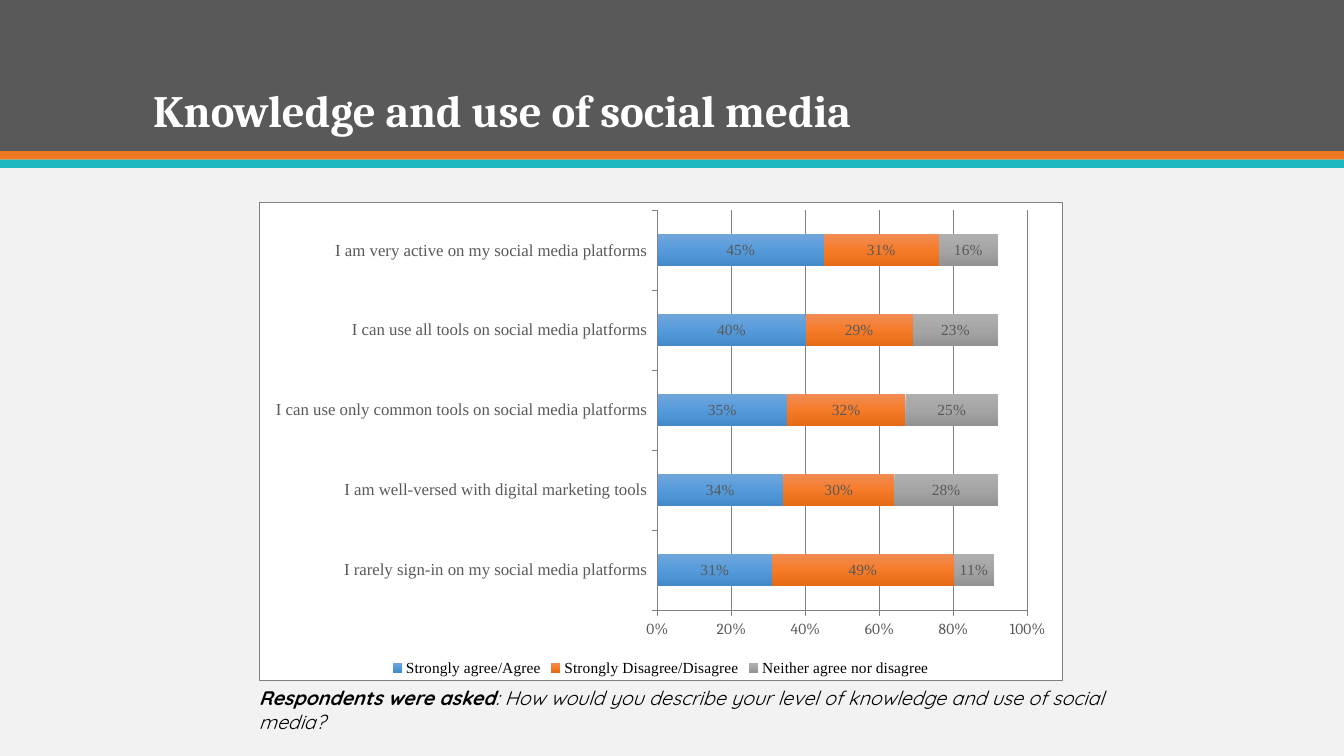
from dataclasses import dataclass

from lxml import etree
from pptx import Presentation
from pptx import util as u
from pptx.chart.data import CategoryChartData
from pptx.dml.color import RGBColor
from pptx.enum import chart as ch
from pptx.enum import shapes, text
from pptx.oxml import parse_xml
from pptx.oxml.ns import nsdecls, qn


@dataclass(frozen=True)
class Theme:
    background: str = "F2F2F2"
    header: str = "595959"
    orange: str = "EF7920"
    teal: str = "1EB8C1"
    white: str = "FFFFFF"
    black: str = "000000"
    chart_text: str = "595959"
    rule: str = "808080"
    heading_font: str = "Cambria"
    note_font: str = "Quicksand"
    chart_font: str = "Times New Roman"
    title_size: float = 32
    note_size: float = 14
    category_size: float = 12
    label_size: float = 11
    chart_size: float = 10
    rule_width: float = 0.25


@dataclass(frozen=True)
class Band:
    top: float
    height: float
    color: str


@dataclass(frozen=True)
class Answer:
    name: str
    values: tuple[float, ...]
    gradient: tuple[str, str, str]


THEME = Theme()
SLIDE_WIDTH, SLIDE_HEIGHT = 960, 540

BANDS = (
    Band(0, 108, THEME.header),
    Band(108, 6, THEME.orange),
    Band(114, 6, THEME.teal),
)
STATEMENTS = (
    "I rarely sign-in on my social media platforms",
    "I am well-versed with digital marketing tools",
    "I can use only common tools on social media platforms",
    "I can use all tools on social media platforms",
    "I am very active on my social media platforms",
)
ANSWERS = (
    Answer("Strongly agree/Agree", (0.31, 0.34, 0.35, 0.4, 0.45),
           ("71A6DB", "559BDB", "438AC9")),
    Answer("Strongly Disagree/Disagree", (0.49, 0.3, 0.32, 0.29, 0.31),
           ("F18C55", "F67B28", "E56B17")),
    Answer("Neither agree nor disagree", (0.11, 0.28, 0.25, 0.23, 0.16),
           ("AFAFAF", "A5A5A5", "929292")),
)


def style_font(font, *, size: float, name: str, color: str,
               bold: bool = False, italic: bool = False) -> None:
    font.size = u.Pt(size)
    font.name = name
    font.bold = bold
    font.italic = italic
    font.color.rgb = RGBColor.from_string(color)


def add_text(paragraph, content: str, **font_format) -> None:
    run = paragraph.add_run()
    run.text = content
    style_font(run.font, **font_format)


def style_line(line) -> None:
    line.width = u.Pt(THEME.rule_width)
    line.color.rgb = RGBColor.from_string(THEME.rule)


def add_band(slide, band: Band) -> None:
    shape = slide.shapes.add_shape(
        shapes.MSO_SHAPE.RECTANGLE, 0, u.Pt(band.top),
        u.Pt(SLIDE_WIDTH), u.Pt(band.height))
    shape.shadow.inherit = False
    shape.fill.solid()
    shape.fill.fore_color.rgb = RGBColor.from_string(band.color)
    shape.line.fill.background()


def add_title(slide) -> None:
    title = slide.shapes.title
    title.left, title.top = u.Pt(102.24), u.Pt(20.16)
    title.width, title.height = u.Pt(786.96), u.Pt(81.36)
    frame = title.text_frame
    frame.auto_size = text.MSO_AUTO_SIZE.NONE
    frame.vertical_anchor = text.MSO_ANCHOR.BOTTOM
    paragraph = frame.paragraphs[0]
    paragraph.alignment = text.PP_ALIGN.LEFT
    paragraph.line_spacing = 0.9
    add_text(paragraph, "Knowledge and use of social media",
             size=THEME.title_size, name=THEME.heading_font,
             color=THEME.white, bold=True)
    title.element.getparent().append(title.element)


def add_note(slide) -> None:
    box = slide.shapes.add_textbox(
        u.Pt(177.84), u.Pt(486.72), u.Pt(635.04), u.Pt(41.04))
    frame = box.text_frame
    frame.word_wrap = True
    frame.auto_size = text.MSO_AUTO_SIZE.SHAPE_TO_FIT_TEXT
    parts = (
        ("Respondents were asked", True),
        (": How would you describe your level of knowledge "
         "and use of social media?", False),
    )
    for content, bold in parts:
        add_text(frame.paragraphs[0], content, size=THEME.note_size,
                 name=THEME.note_font, color=THEME.black,
                 bold=bold, italic=True)


def area_format(border: str):
    return parse_xml(
        f'<c:spPr {nsdecls("c", "a")}><a:solidFill>'
        f'<a:srgbClr val="{THEME.white}"/></a:solidFill>{border}</c:spPr>')


def fill_gradient(stops, colors: tuple[str, ...]) -> None:
    for stop in list(stops):
        stops.remove(stop)
    for index, color in enumerate(colors):
        stop = etree.SubElement(stops, qn("a:gs"), pos=str(index * 50000))
        etree.SubElement(stop, qn("a:srgbClr"), val=color)


def style_areas(chart) -> None:
    border = (f'<a:ln w="{u.Pt(THEME.rule_width)}"><a:solidFill>'
              f'<a:srgbClr val="{THEME.rule}"/></a:solidFill></a:ln>')
    chart.element.find(qn("c:txPr")).addprevious(area_format(border))
    plot_area = chart.element.find(f'{qn("c:chart")}/{qn("c:plotArea")}')
    plot_area.append(area_format("<a:ln><a:noFill/></a:ln>"))
    for layout in plot_area.findall(qn("c:layout")):
        plot_area.remove(layout)
    layout = etree.Element(qn("c:layout"))
    plot_area.insert(0, layout)
    manual = etree.SubElement(layout, qn("c:manualLayout"))
    settings = (("layoutTarget", "inner"), ("xMode", "edge"),
                ("yMode", "edge"), ("x", "0.496"), ("y", "0.018"),
                ("w", "0.461"), ("h", "0.835"))
    for name, value in settings:
        etree.SubElement(manual, qn(f"c:{name}"), val=value)


def style_axes(chart) -> None:
    category, value = chart.category_axis, chart.value_axis
    for axis, size, name in (
            (category, THEME.category_size, THEME.chart_font),
            (value, THEME.label_size, THEME.heading_font)):
        axis.major_tick_mark = ch.XL_TICK_MARK.OUTSIDE
        axis.minor_tick_mark = ch.XL_TICK_MARK.NONE
        style_line(axis.format.line)
        style_font(axis.tick_labels.font, size=size, name=name,
                   color=THEME.chart_text)
    category.has_major_gridlines = False
    value.minimum_scale, value.maximum_scale = 0, 1
    value.major_unit = 0.2
    value.has_major_gridlines = True
    style_line(value.major_gridlines.format.line)
    value.tick_labels.number_format = "0%"
    value.tick_labels.number_format_is_linked = False


def add_survey_chart(slide) -> None:
    data = CategoryChartData(number_format="0%")
    data.categories = STATEMENTS
    for answer in ANSWERS:
        data.add_series(answer.name, answer.values)
    chart = slide.shapes.add_chart(
        ch.XL_CHART_TYPE.BAR_STACKED, u.Pt(185.04), u.Pt(144),
        u.Pt(573.84), u.Pt(342), data).chart
    chart.has_title = False
    style_font(chart.font, size=THEME.chart_size, name=THEME.heading_font,
               color=THEME.chart_text)
    style_axes(chart)
    plot = chart.plots[0]
    plot.gap_width, plot.overlap = 150, 100
    plot.vary_by_categories = False
    for series in plot.series:
        series.format.fill.gradient()
        series.format.fill.gradient_angle = 270
        labels = series.data_labels
        labels.show_value = True
        labels.number_format = "0%"
        labels.number_format_is_linked = False
        style_font(labels.font, size=THEME.label_size,
                   name=THEME.chart_font, color=THEME.chart_text)
    for stops, answer in zip(chart.element.iter(qn("a:gsLst")), ANSWERS):
        fill_gradient(stops, answer.gradient)
    chart.has_legend = True
    chart.legend.position = ch.XL_LEGEND_POSITION.BOTTOM
    chart.legend.include_in_layout = False
    style_font(chart.legend.font, size=THEME.label_size,
               name=THEME.chart_font, color=THEME.black)
    style_areas(chart)


def main() -> None:
    presentation = Presentation()
    presentation.slide_width = u.Pt(SLIDE_WIDTH)
    presentation.slide_height = u.Pt(SLIDE_HEIGHT)
    slide = presentation.slides.add_slide(presentation.slide_layouts[5])
    slide.background.fill.solid()
    slide.background.fill.fore_color.rgb = RGBColor.from_string(THEME.background)
    for band in BANDS:
        add_band(slide, band)
    add_title(slide)
    add_note(slide)
    add_survey_chart(slide)
    presentation.save("out.pptx")


if __name__ == "__main__":
    main()
